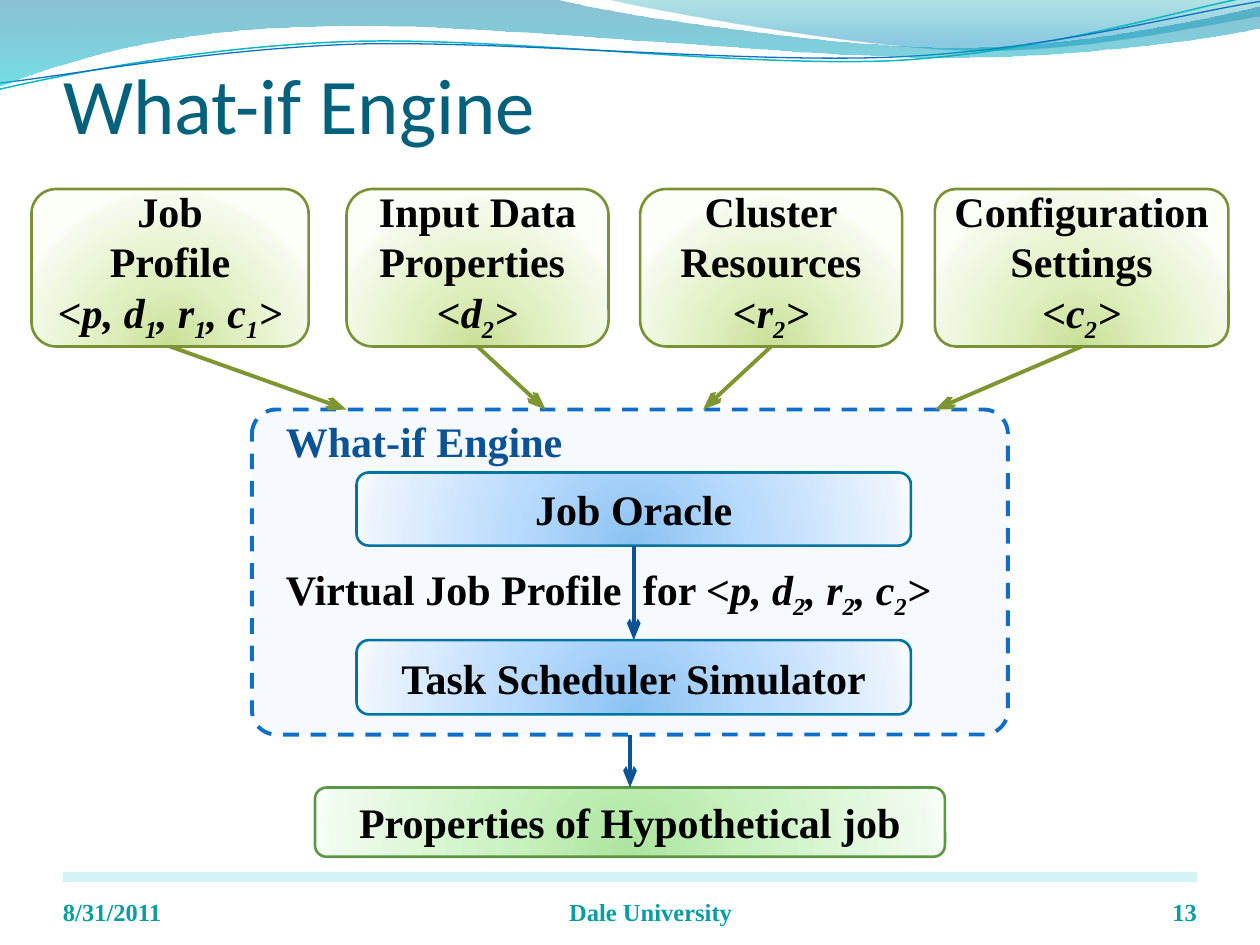
"""Build the What-if Engine slide: four inputs, the engine and its result."""
from dataclasses import dataclass

import pptx
import pptx.dml.color
import pptx.enum.dml
import pptx.enum.shapes
import pptx.enum.text
import pptx.oxml
import pptx.oxml.ns
import pptx.util
from pptx.util import Inches

RGBColor = pptx.dml.color.RGBColor
Align = pptx.enum.text.PP_ALIGN
Anchor = pptx.enum.text.MSO_ANCHOR
Shapes = pptx.enum.shapes.MSO_SHAPE
qn = pptx.oxml.ns.qn
NAMESPACE = pptx.oxml.ns.nsdecls("a")

BLACK = RGBColor(0x00, 0x00, 0x00)
TITLE_TEAL = RGBColor(0x04, 0x61, 0x7B)
FOOTER_TEAL = RGBColor(0x08, 0x9C, 0xA3)
FOOTER_BAR = RGBColor(0xB3, 0xEA, 0xF2)
NAVY = RGBColor(0x0B, 0x53, 0x94)
ENGINE_BLUE = RGBColor(0x0F, 0x6F, 0xC6)
ENGINE_FILL = RGBColor(0xC8, 0xE3, 0xFB)
OLIVE = RGBColor(0x7E, 0x96, 0x32)
CYAN = RGBColor(0x0A, 0xB8, 0xBF)
DEEP_TEAL = RGBColor(0x00, 0x74, 0xA1)
WAVE_TEAL = RGBColor(0x00, 0xA1, 0xA9)
WAVE_BLUE = RGBColor(0x00, 0x8B, 0xBF)
WAVE_CYAN = RGBColor(0x00, 0xC6, 0xCF)
RADIAL = '<a:path path="circle"><a:fillToRect l="50000" t="130000" r="50000" b="-30000"/></a:path>'
DOWNWARD = '<a:lin ang="5400000" scaled="0"/>'


@dataclass(frozen=True)
class Glow:
    colors: tuple
    outline: RGBColor


@dataclass(frozen=True)
class Run:
    text: str
    italic: bool = False
    subscript: bool = False
    spacing: int = 0


@dataclass(frozen=True)
class EngineInput:
    lines: tuple
    formula: str
    left: float
    width: float
    corner: float
    arrow_x: float
    side_inset: float = 0.1


@dataclass(frozen=True)
class Wave:
    start: tuple
    segments: tuple
    stops: tuple = ()
    line: RGBColor = None
    weight: float = 0


GREEN_GLOW = Glow(("C9DF97", "E0F0C1", "F5FAEC", "FCFEF8"), RGBColor(0x7B, 0x91, 0x35))
BLUE_GLOW = Glow(("8BC2F1", "B9DBFD", "EAF3FE", "F8FBFF"), DEEP_TEAL)
RESULT_GLOW = Glow(("ACE49F", "CDF3C4", "EFFBED", "F9FFF8"), RGBColor(0x5B, 0x97, 0x47))
INPUTS = (
    EngineInput(("Job", "Profile"), "<p, d_1, r_1, c_1>", 0.25, 2.2, 0.157, 2.75),
    EngineInput(("Input Data", "Properties "), "<d_2>", 2.75, 2.08, 0.167, 4.33, 0),
    EngineInput(("Cluster", "Resources"), "<r_2>", 5.08, 2.08, 0.167, 5.58),
    EngineInput(("Configuration", "Settings"), "<c_2>", 7.42, 2.33, 0.133, 7.42),
)
WAVES = (
    Wave((4.79, -0.01), ((5.09, 0.07, 6.82, 0.38, 7.69, 0.4), (8.56, 0.42, 9.61, 0.19, 10, 0.13),
                         (10, 0), (4.79, -0.01)), stops=((0, WAVE_TEAL, 30), (80, WAVE_BLUE, 45))),
    Wave((-0.01, 0.71), ((0.47, 0.6, 1.58, 0.37, 2.77, 0.33), (3.96, 0.29, 5.92, 0.54, 7.12, 0.48),
                         (8.32, 0.41, 9.39, 0.07, 9.99, -0.04)), line=CYAN, weight=0.85),
    Wave((-0.01, 0.66), ((0.47, 0.61, 1.64, 0.39, 2.83, 0.35), (4.03, 0.32, 5.97, 0.51, 7.16, 0.45),
                         (8.36, 0.39, 9.42, 0.1, 10.01, 0.01)), line=ENGINE_BLUE, weight=0.75),
    Wave((0, -0.01), ((4.4, -0.01), (4.76, 0.1, 6.64, 0.38, 7.58, 0.38), (8.53, 0.38, 9.58, 0.15, 10, 0.05),
                      (10.01, 0.22), (9.83, 0.27, 8.7, 0.46, 7.46, 0.46), (6.22, 0.46, 3.82, 0.17, 2.57, 0.21),
                      (1.29, 0.22, 0.46, 0.51, -0.01, 0.69), (0, -0.01)),
         stops=((0, DEEP_TEAL, 45), (100, WAVE_CYAN, 55))),
)


def formula_runs(formula: str) -> list:
    """Split a formula into italic runs, where _ marks a one-letter subscript."""
    first, *rest = formula.split("_")
    pairs = [(Run(part[0], True, True), Run(part[1:], True)) for part in rest]
    return [Run(first, True)] + [run for pair in pairs for run in pair]


def write(shape, paragraphs, *, size=24, font="Times New Roman", color=BLACK, bold=True, align=Align.LEFT,
          anchor=Anchor.TOP, insets=(0.1, 0.05, 0.1, 0.05)):
    """Fill a shape with paragraphs, each a list of runs."""
    frame = shape.text_frame
    frame.word_wrap, frame.vertical_anchor = True, anchor
    frame.margin_left, frame.margin_top, frame.margin_right, frame.margin_bottom = map(Inches, insets)
    for index, runs in enumerate(paragraphs):
        paragraph = frame.add_paragraph() if index else frame.paragraphs[0]
        paragraph.alignment = align
        for part in runs:
            run = paragraph.add_run()
            run.text = part.text
            run.font.size, run.font.name = pptx.util.Pt(size), font
            run.font.bold, run.font.italic = bold, part.italic or None
            run.font.color.rgb = color
            if part.subscript:
                run.font._element.set("baseline", "-25000")
            if part.spacing:
                run.font._element.set("spc", str(part.spacing))


def fill_solid(shape, color: RGBColor, alpha: int):
    """Fill a shape with one translucent colour."""
    shape.fill.solid()
    shape.fill.fore_color.rgb = color
    tint = shape._element.spPr.find(qn("a:solidFill"))[0]
    tint.append(pptx.oxml.parse_xml(f'<a:alpha {NAMESPACE} val="{alpha * 1000}"/>'))


def fill_gradient(shape, stops, direction: str):
    """Fill a shape with a gradient of (position, colour, alpha) stops."""
    shape.fill.background()
    marks = "".join(f'<a:gs pos="{position * 1000}"><a:srgbClr val="{color}"><a:alpha val="{alpha * 1000}"/>'
                    '</a:srgbClr></a:gs>' for position, color, alpha in stops)
    properties = shape._element.spPr
    properties.replace(properties.find(qn("a:noFill")), pptx.oxml.parse_xml(
        f'<a:gradFill {NAMESPACE} rotWithShape="1"><a:gsLst>{marks}</a:gsLst>{direction}</a:gradFill>'))


def set_line(shape, color: RGBColor, weight: float):
    """Colour and size a shape's line."""
    shape.line.color.rgb = color
    shape.line.width = pptx.util.Pt(weight)


def add_box(slide, place: tuple, *, kind=Shapes.ROUNDED_RECTANGLE, corner=0.167):
    """Add a shadowless box."""
    box = slide.shapes.add_shape(kind, *map(Inches, place))
    box.shadow.inherit = False
    if kind == Shapes.ROUNDED_RECTANGLE:
        box.adjustments[0] = corner
    return box


def add_stage(slide, place: tuple, glow: Glow, paragraphs, *, corner=0.167, insets=(0.1, 0.05, 0.1, 0.05)):
    """Add a glowing box with centred text."""
    stage = add_box(slide, place, corner=corner)
    fill_gradient(stage, zip((0, 43, 93, 100), glow.colors, (100,) * 4), RADIAL)
    set_line(stage, glow.outline, 1.5)
    write(stage, paragraphs, align=Align.CENTER, anchor=Anchor.MIDDLE, insets=insets)
    return stage


def add_label(slide, place: tuple, runs: list, **style):
    """Add a one-paragraph text box."""
    write(slide.shapes.add_textbox(*map(Inches, place)), [runs], **style)


def add_arrow(slide, source, color: RGBColor, *, target=None, end=(0, 0)):
    """Lead an arrow from the bottom of a box to a box's top or to a point."""
    arrow = slide.shapes.add_connector(pptx.enum.shapes.MSO_CONNECTOR.STRAIGHT, 0, 0, *map(Inches, end))
    arrow.begin_connect(source, 2)
    if target is not None:
        arrow.end_connect(target, 0)
    set_line(arrow, color, 2.25)
    properties = arrow._element.spPr
    properties.find(qn("a:ln")).append(pptx.oxml.parse_xml(f'<a:tailEnd {NAMESPACE} type="arrow" len="lg"/>'))
    properties.append(pptx.oxml.parse_xml(f"<a:effectLst {NAMESPACE}/>"))


def add_wave(slide, wave: Wave):
    """Draw a wave whose segments are line ends or cubic curves."""
    points = [(Inches(s[i]), Inches(s[i + 1])) for s in wave.segments for i in range(0, len(s), 2)]
    builder = slide.shapes.build_freeform(*map(Inches, wave.start))
    builder.add_line_segments(points, close=bool(wave.stops))
    shape = builder.convert_to_shape()
    shape.shadow.inherit = False
    steps = iter(list(shape._element.iter(qn("a:lnTo"))))
    for segment in wave.segments:
        parts = [next(steps) for _ in segment[::2]]
        if len(parts) == 3:
            curve = pptx.oxml.parse_xml(f"<a:cubicBezTo {NAMESPACE}/>")
            parts[0].addprevious(curve)
            for part in parts:
                curve.append(part[0])
                part.getparent().remove(part)
    if wave.stops:
        fill_gradient(shape, wave.stops, DOWNWARD)
        shape.line.fill.background()
    else:
        shape.fill.background()
        set_line(shape, wave.line, wave.weight)


def main():
    """Build and save the slide."""
    deck = pptx.Presentation()
    deck.slide_width, deck.slide_height = Inches(10), Inches(7.5)
    slide = deck.slides.add_slide(deck.slide_layouts[5])
    footer_bar = add_box(slide, (0.5, 6.92, 9, 0.08), kind=Shapes.RECTANGLE)
    fill_solid(footer_bar, FOOTER_BAR, 55)
    footer_bar.line.fill.background()
    for wave in WAVES:
        add_wave(slide, wave)
    title = slide.shapes.title
    title.left, title.top, title.width, title.height = map(Inches, (0.5, 0.33, 9, 0.92))
    write(title, [[Run("What-if Engine")]], size=45, font="Calibri", color=TITLE_TEAL, bold=False,
          anchor=Anchor.MIDDLE, insets=(0, 0.05, 0, 0))
    for text, left, width, align in (("8/31/2011", 0.5, 2.33, Align.LEFT), ("13", 8.67, 0.83, Align.RIGHT),
                                     ("Dale University", 3.33, 3.67, Align.CENTER)):
        add_label(slide, (left, 6.95, width, 0.4), [Run(text)], size=14, color=FOOTER_TEAL,
                  align=align, anchor=Anchor.BOTTOM, insets=(0, 0, 0, 0))
    engine = add_box(slide, (2, 3.25, 6, 2.58), corner=0.075)
    fill_solid(engine, ENGINE_FILL, 15)
    set_line(engine, ENGINE_BLUE, 2.25)
    engine.line.dash_style = pptx.enum.dml.MSO_LINE.DASH
    add_label(slide, (2.17, 3.25, 3.08, 0.5), [Run("What-if Engine")], color=NAVY)
    oracle = add_stage(slide, (2.83, 3.75, 4.4, 0.58), BLUE_GLOW, [[Run("Job Oracle")]])
    simulator = add_stage(slide, (2.83, 5.08, 4.4, 0.59), BLUE_GLOW, [[Run("Task Scheduler Simulator")]])
    result = add_stage(slide, (2.5, 6.25, 5, 0.55), RESULT_GLOW, [[Run("Properties of Hypothetical job")]])
    for item in INPUTS:
        source = add_stage(slide, (item.left, 1.5, item.width, 1.25), GREEN_GLOW,
                           [[Run(line)] for line in item.lines] + [formula_runs(item.formula)],
                           corner=item.corner, insets=(item.side_inset, 0, item.side_inset, 0.05))
        add_arrow(slide, source, OLIVE, end=(item.arrow_x, 3.25))
    add_arrow(slide, oracle, NAVY, target=simulator)
    add_arrow(slide, engine, NAVY, target=result)
    add_label(slide, (2.17, 4.42, 5.42, 0.5), [Run("Virtual Job Profile"), Run(" ", spacing=600), Run("for "),
                                               *formula_runs("<p, d_2, r_2, c_2>")])
    deck.save("out.pptx")


if __name__ == "__main__":
    main()
